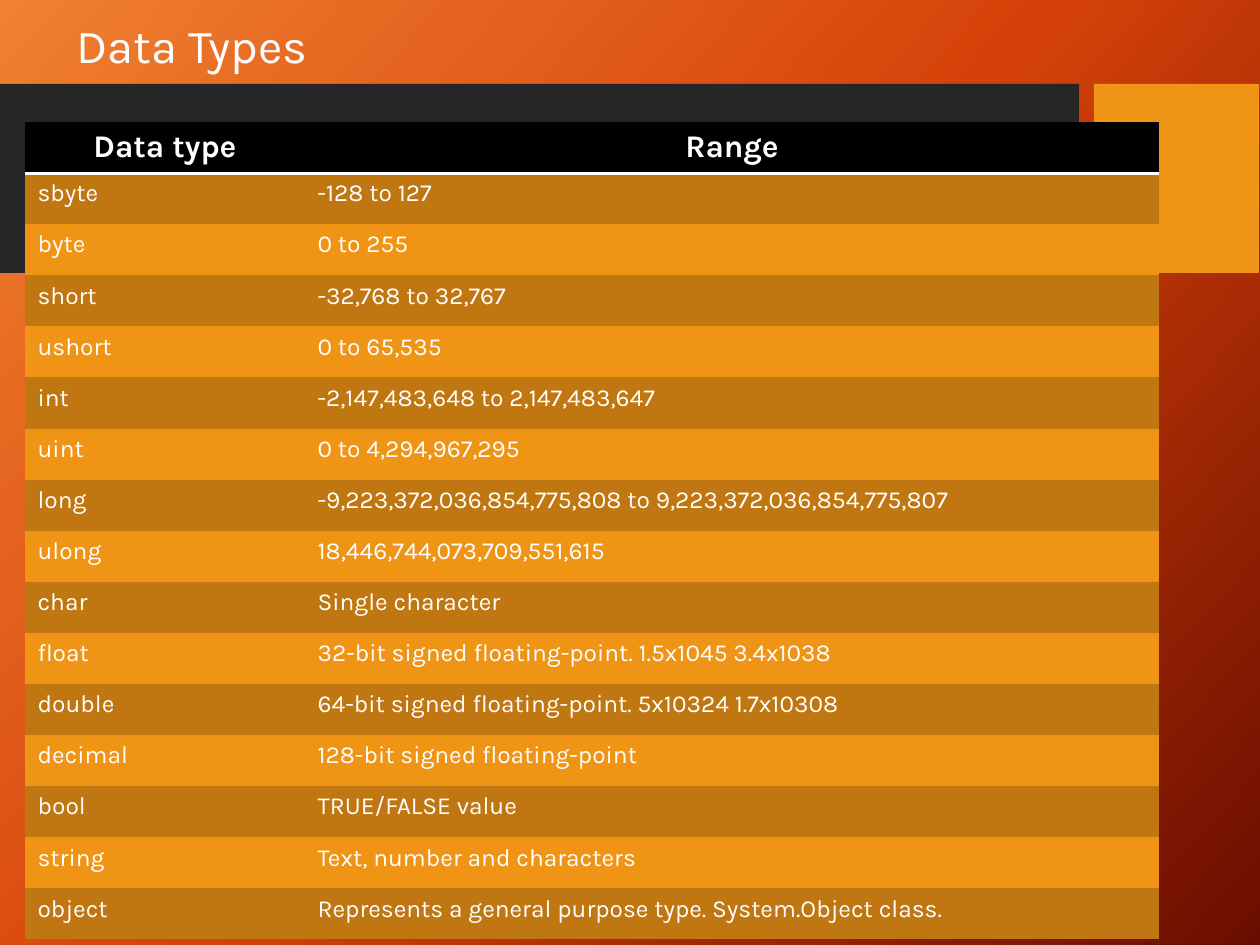
from copy import deepcopy

from lxml import etree
from pptx import Presentation
from pptx import util as u
from pptx.dml.color import RGBColor
from pptx.enum import shapes, text
from pptx.oxml.ns import qn

# Content
TITLE = "Data Types"
HEADER = ("Data type", "Range")
DATA_TYPES = [
    ("sbyte", "-128 to 127"),
    ("byte", "0 to 255"),
    ("short", "-32,768 to 32,767"),
    ("ushort", "0 to 65,535"),
    ("int", "-2,147,483,648 to 2,147,483,647"),
    ("uint", "0 to 4,294,967,295"),
    ("long", "-9,223,372,036,854,775,808 to 9,223,372,036,854,775,807"),
    ("ulong", "18,446,744,073,709,551,615"),
    ("char", "Single character"),
    ("float", "32-bit signed floating-point. 1.5x1045 3.4x1038"),
    ("double", "64-bit signed floating-point. 5x10324 1.7x10308"),
    ("decimal", "128-bit signed floating-point"),
    ("bool", "TRUE/FALSE value"),
    ("string", "Text, number and characters"),
    ("object", "Represents a general purpose type. System.Object class."),
]

# Look
FONT = "Karla"
WHITE, BLACK, CHARCOAL = "FFFFFF", "000000", "262626"
ORANGE, DARK_ORANGE = "F09415", "C07711"
GRADIENT = [(0, "F18031"), (0.5, "D54209"), (1, "6A0D00")]
BANDS = [(0, 84, 1079, 189, CHARCOAL), (1094, 84, 165, 189, ORANGE)]
TITLE_BOX = (64, 0, 1134, 96)
TABLE_LEFT, TABLE_TOP, TABLE_HEIGHT = 25, 122, 818
COLUMN_WIDTHS = (280, 854)
PLAIN_TABLE_STYLE = "{2D5ABB26-0587-4C30-8999-92F81FD0307C}"


def px(length):
    return u.Emu(round(length * 914400 / 126))


def color(hex_string):
    return RGBColor.from_string(hex_string)


def style_font(paragraph, size, bold=False):
    font = paragraph.font
    font.name, font.size, font.bold = FONT, u.Pt(size), bold
    font.color.rgb = color(WHITE)


def add_bottom_border(cell, width, hex_string):
    line = etree.Element(qn("a:lnB"), w=str(u.Pt(width)))
    fill = etree.SubElement(line, qn("a:solidFill"))
    etree.SubElement(fill, qn("a:srgbClr"), val=hex_string)
    cell._tc.get_or_add_tcPr().insert(0, line)


def set_background(slide):
    fill = slide.background.fill
    fill.gradient()
    fill.gradient_angle = 360 - 42
    stop_list = slide.element.find(".//" + qn("a:gsLst"))
    stop_list.insert(1, deepcopy(stop_list[0]))
    for stop, (position, hex_string) in zip(fill.gradient_stops, GRADIENT):
        stop.position = position
        stop.color.rgb = color(hex_string)


def add_bands(slide):
    for *box, hex_string in BANDS:
        band = slide.shapes.add_shape(shapes.MSO_SHAPE.RECTANGLE, *map(px, box))
        band.shadow.inherit = False
        band.fill.solid()
        band.fill.fore_color.rgb = color(hex_string)
        band.line.fill.background()


def set_title(slide):
    title = slide.shapes.title
    title.left, title.top, title.width, title.height = map(px, TITLE_BOX)
    frame = title.text_frame
    frame.text = TITLE
    frame.vertical_anchor = text.MSO_ANCHOR.MIDDLE
    paragraph = frame.paragraphs[0]
    paragraph.alignment = text.PP_ALIGN.LEFT
    paragraph.line_spacing = 0.9
    style_font(paragraph, 27)


def add_type_table(slide):
    rows = [HEADER, *DATA_TYPES]
    frame = slide.shapes.add_table(
        len(rows), len(HEADER), px(TABLE_LEFT), px(TABLE_TOP),
        px(sum(COLUMN_WIDTHS)), px(TABLE_HEIGHT))
    table = frame.table
    table.horz_banding = False
    table._tbl.tblPr.find(qn("a:tableStyleId")).text = PLAIN_TABLE_STYLE
    for column, width in zip(table.columns, COLUMN_WIDTHS):
        column.width = px(width)
    for row_index, values in enumerate(rows):
        is_header = row_index == 0
        row_color = BLACK if is_header else (ORANGE, DARK_ORANGE)[row_index % 2]
        table.rows[row_index].height = px(TABLE_HEIGHT / len(rows))
        for cell, value in zip(table.rows[row_index].cells, values):
            cell.text = value
            cell.fill.solid()
            cell.fill.fore_color.rgb = color(row_color)
            paragraph = cell.text_frame.paragraphs[0]
            style_font(paragraph, 18 if is_header else 14, is_header)
            if is_header:
                paragraph.alignment = text.PP_ALIGN.CENTER
                add_bottom_border(cell, 2, WHITE)


def main():
    presentation = Presentation()
    presentation.slide_width, presentation.slide_height = px(1260), px(945)
    slide = presentation.slides.add_slide(presentation.slide_layouts[5])
    set_background(slide)
    add_bands(slide)
    set_title(slide)
    add_type_table(slide)
    presentation.save("out.pptx")


if __name__ == "__main__":
    main()
